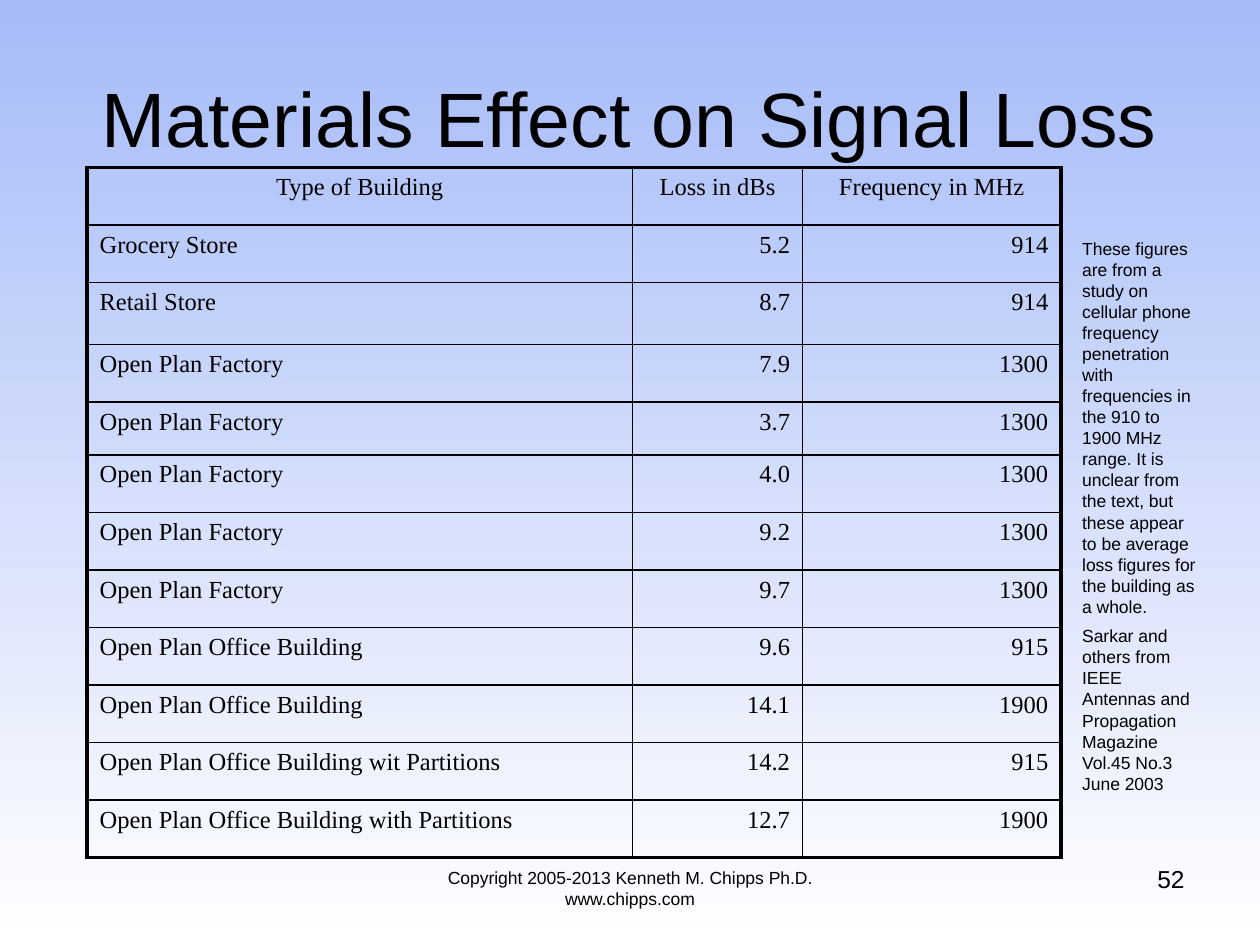
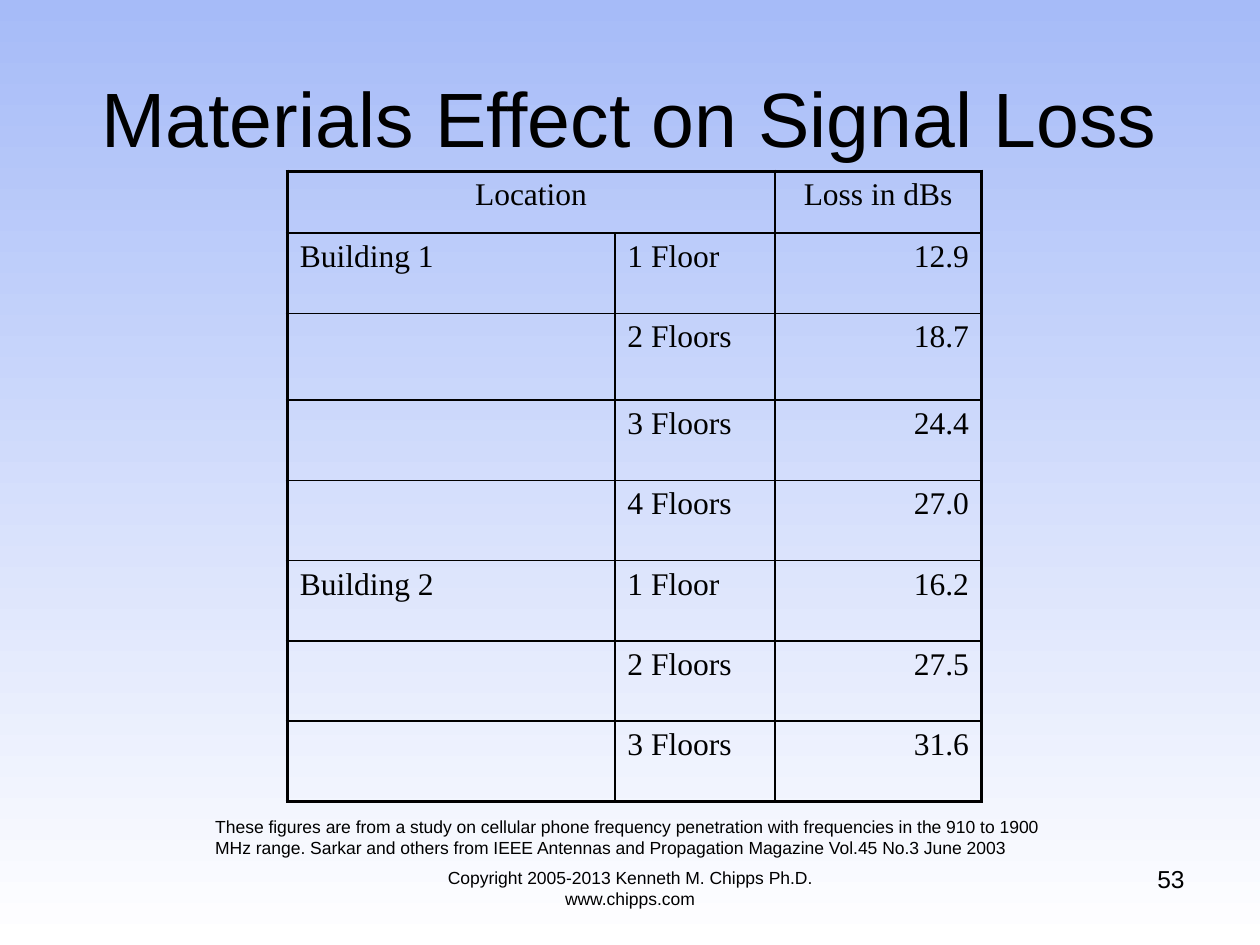
from dataclasses import dataclass

from lxml.etree import SubElement
from pptx import Presentation
from pptx.dml.color import RGBColor
from pptx.enum.text import MSO_ANCHOR, PP_ALIGN
from pptx.oxml.ns import qn
from pptx.slide import Slide, SlideMaster
from pptx.table import _Cell
from pptx.text.text import _Paragraph
from pptx.util import Inches, Pt

BLACK = RGBColor(0x00, 0x00, 0x00)
SKY_BLUE = RGBColor(0xA6, 0xBB, 0xF8)
WHITE = RGBColor(0xFF, 0xFF, 0xFF)
SANS = "Arial"
SERIF = "Times New Roman"
LEFT, CENTER, RIGHT = PP_ALIGN.LEFT, PP_ALIGN.CENTER, PP_ALIGN.RIGHT
OUTER_LINE = Pt(2.25)
INNER_LINE = Pt(1)

TITLE = "Materials Effect on Signal Loss"
COPYRIGHT = "Copyright 2005-2013 Kenneth M. Chipps Ph.D. www.chipps.com"
STUDY = (
    "These figures are from a study on cellular phone frequency penetration "
    "with frequencies in the 910 to 1900 MHz range."
)
CAVEAT = (
    "It is unclear from the text, but these appear to be average loss figures "
    "for the building as a whole."
)
CITATION = "Sarkar and others from IEEE Antennas and Propagation Magazine Vol.45 No.3 June 2003"


@dataclass(frozen=True)
class Box:
    """A rectangle on the slide, in inches."""

    left: float
    top: float
    width: float
    height: float

    def lengths(self) -> list[Inches]:
        """Return the rectangle as slide lengths."""
        return [Inches(value) for value in (self.left, self.top, self.width, self.height)]


@dataclass(frozen=True)
class TextStyle:
    """The font and alignment of a piece of text."""

    size: float
    font: str = SANS
    alignment: PP_ALIGN = LEFT


@dataclass(frozen=True)
class LossTable:
    """A table of losses; rows without a special height share what is left."""

    box: Box
    size: float
    column_widths: tuple[float, ...]
    alignments: tuple[PP_ALIGN, ...]
    special_heights: dict[int, float]
    rows: tuple[tuple[str, ...], ...]
    header_span: int = 1


@dataclass(frozen=True)
class LossSlide:
    """A numbered slide with one table and one source note."""

    number: int
    table: LossTable
    note_box: Box
    note: tuple[str, ...]


TITLE_BOX = Box(0.5, 0.3, 9, 1.25)
NUMBER_BOX = Box(7.17, 6.81, 2.33, 0.52)
COPYRIGHT_BOX = Box(3, 6.83, 4, 0.52)

BUILDING_TYPES = LossTable(
    box=Box(0.69, 1.33, 7.73, 5.48),
    size=14,
    column_widths=(4.33, 1.35, 2.05),
    alignments=(LEFT, RIGHT, RIGHT),
    special_heights={2: 0.49, 4: 0.42},
    rows=(
        ("Type of Building", "Loss in dBs", "Frequency in MHz"),
        ("Grocery Store", "5.2", "914"),
        ("Retail Store", "8.7", "914"),
        ("Open Plan Factory", "7.9", "1300"),
        ("Open Plan Factory", "3.7", "1300"),
        ("Open Plan Factory", "4.0", "1300"),
        ("Open Plan Factory", "9.2", "1300"),
        ("Open Plan Factory", "9.7", "1300"),
        ("Open Plan Office Building", "9.6", "915"),
        ("Open Plan Office Building", "14.1", "1900"),
        ("Open Plan Office Building wit Partitions", "14.2", "915"),
        ("Open Plan Office Building with Partitions", "12.7", "1900"),
    ),
)
FLOORS = LossTable(
    box=Box(2.28, 1.36, 5.51, 5),
    size=18,
    column_widths=(2.6, 1.27, 1.64),
    alignments=(LEFT, LEFT, RIGHT),
    special_heights={0: 0.49, 2: 0.69},
    rows=(
        ("Location", "", "Loss in dBs"),
        ("Building 1", "1 Floor", "12.9"),
        ("", "2 Floors", "18.7"),
        ("", "3 Floors", "24.4"),
        ("", "4 Floors", "27.0"),
        ("Building 2", "1 Floor", "16.2"),
        ("", "2 Floors", "27.5"),
        ("", "3 Floors", "31.6"),
    ),
    header_span=2,
)
LOSS_SLIDES = (
    LossSlide(52, BUILDING_TYPES, Box(8.49, 1.84, 1.11, 4.52), (f"{STUDY} {CAVEAT}", CITATION)),
    LossSlide(53, FLOORS, Box(1.61, 6.43, 6.82, 0.44), (f"{STUDY} {CITATION}",)),
)


def write_paragraph(paragraph: _Paragraph, text: str, style: TextStyle) -> None:
    """Fill a paragraph and format its runs."""
    paragraph.text = text
    paragraph.alignment = style.alignment
    for run in paragraph.runs:
        run.font.name = style.font
        run.font.size = Pt(style.size)
        run.font.color.rgb = BLACK


def add_text(
    slide: Slide,
    box: Box,
    texts: tuple[str, ...],
    style: TextStyle,
    anchor: MSO_ANCHOR = MSO_ANCHOR.TOP,
) -> None:
    """Add a wrapped text box, with half a line between paragraphs."""
    text_frame = slide.shapes.add_textbox(*box.lengths()).text_frame
    text_frame.word_wrap = True
    text_frame.vertical_anchor = anchor
    for index, text in enumerate(texts):
        paragraph = text_frame.add_paragraph() if index else text_frame.paragraphs[0]
        write_paragraph(paragraph, text, style)
        if index:
            paragraph.space_before = Pt(style.size / 2)


def set_borders(cell: _Cell, outer_sides: dict[str, bool]) -> None:
    """Draw the four borders of a cell, heavier on the table's edge."""
    properties = cell._tc.get_or_add_tcPr()
    for side, is_outer in outer_sides.items():
        width = OUTER_LINE if is_outer else INNER_LINE
        line = SubElement(properties, qn(f"a:ln{side}"), w=str(int(width)))
        fill = SubElement(line, qn("a:solidFill"))
        SubElement(fill, qn("a:srgbClr"), val=str(BLACK))


def add_loss_table(slide: Slide, loss_table: LossTable) -> None:
    """Add a transparent table ruled in black."""
    row_count, column_count = len(loss_table.rows), len(loss_table.column_widths)
    frame = slide.shapes.add_table(row_count, column_count, *loss_table.box.lengths())
    table = frame.table
    table.first_row = table.horz_banding = False
    for column, width in zip(table.columns, loss_table.column_widths):
        column.width = Inches(width)
    special = loss_table.special_heights
    usual_height = (loss_table.box.height - sum(special.values())) / (row_count - len(special))
    for row_index, texts in enumerate(loss_table.rows):
        table.rows[row_index].height = Inches(special.get(row_index, usual_height))
        for column_index, text in enumerate(texts):
            cell = table.cell(row_index, column_index)
            alignment = loss_table.alignments[column_index] if row_index else CENTER
            style = TextStyle(loss_table.size, SERIF, alignment)
            write_paragraph(cell.text_frame.paragraphs[0], text, style)
            outer_sides = {
                "L": column_index == 0,
                "R": column_index == column_count - 1,
                "T": row_index == 0,
                "B": row_index == row_count - 1,
            }
            set_borders(cell, outer_sides)
            cell.fill.background()
    if loss_table.header_span > 1:
        table.cell(0, 0).merge(table.cell(0, loss_table.header_span - 1))


def set_background(master: SlideMaster) -> None:
    """Give all slides a gradient from blue down to white."""
    fill = master.background.fill
    fill.gradient()
    fill.gradient_angle = 270
    for stop, color, position in zip(fill.gradient_stops, (SKY_BLUE, WHITE), (0, 1)):
        stop.color.rgb = color
        stop.position = position


def add_loss_slide(presentation: Presentation, content: LossSlide) -> None:
    """Add one slide with its title, table, note and footer."""
    slide = presentation.slides.add_slide(presentation.slide_layouts[6])
    add_text(slide, TITLE_BOX, (TITLE,), TextStyle(44, alignment=CENTER), MSO_ANCHOR.MIDDLE)
    add_loss_table(slide, content.table)
    add_text(slide, NUMBER_BOX, (str(content.number),), TextStyle(14, alignment=RIGHT))
    add_text(slide, content.note_box, content.note, TextStyle(10))
    add_text(slide, COPYRIGHT_BOX, (COPYRIGHT,), TextStyle(10, alignment=CENTER))


def main() -> None:
    """Build and save the presentation."""
    presentation = Presentation()
    presentation.slide_width = Inches(10)
    presentation.slide_height = Inches(7.5)
    set_background(presentation.slide_master)
    for content in LOSS_SLIDES:
        add_loss_slide(presentation, content)
    presentation.save("out.pptx")


if __name__ == "__main__":
    main()
